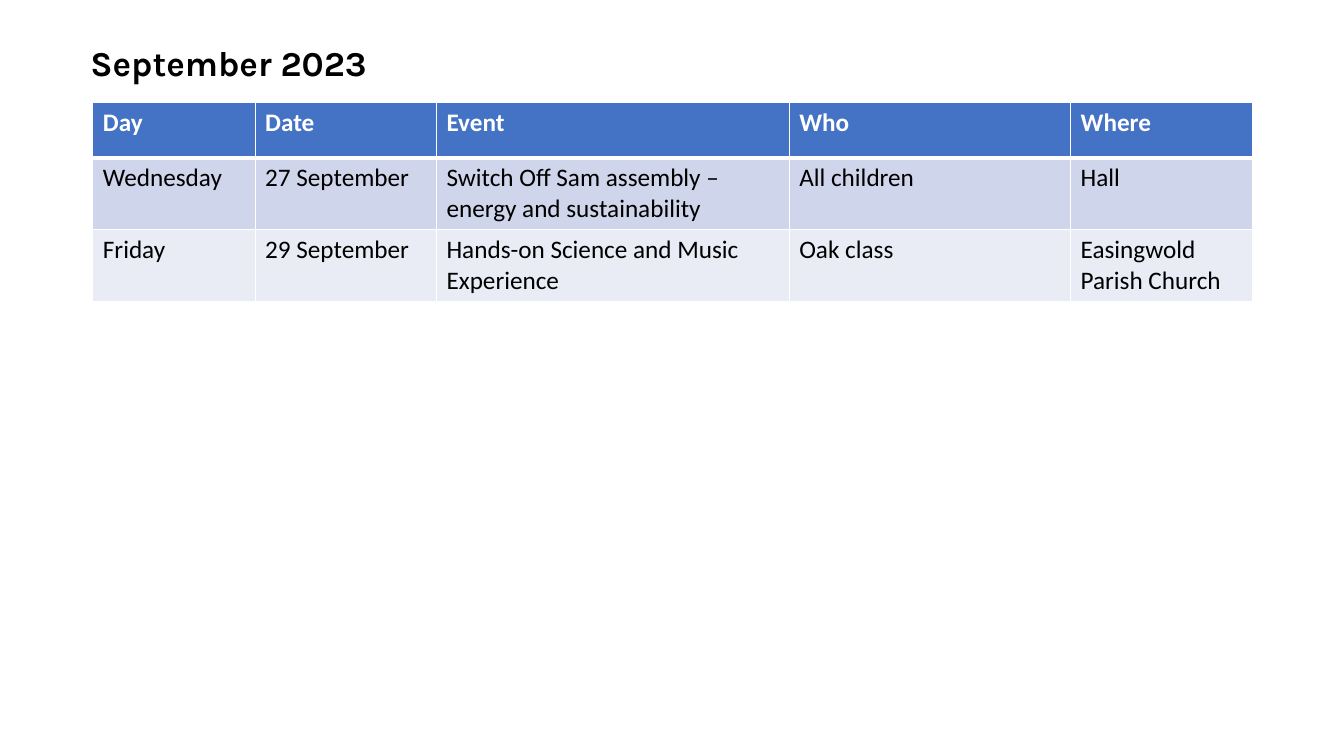
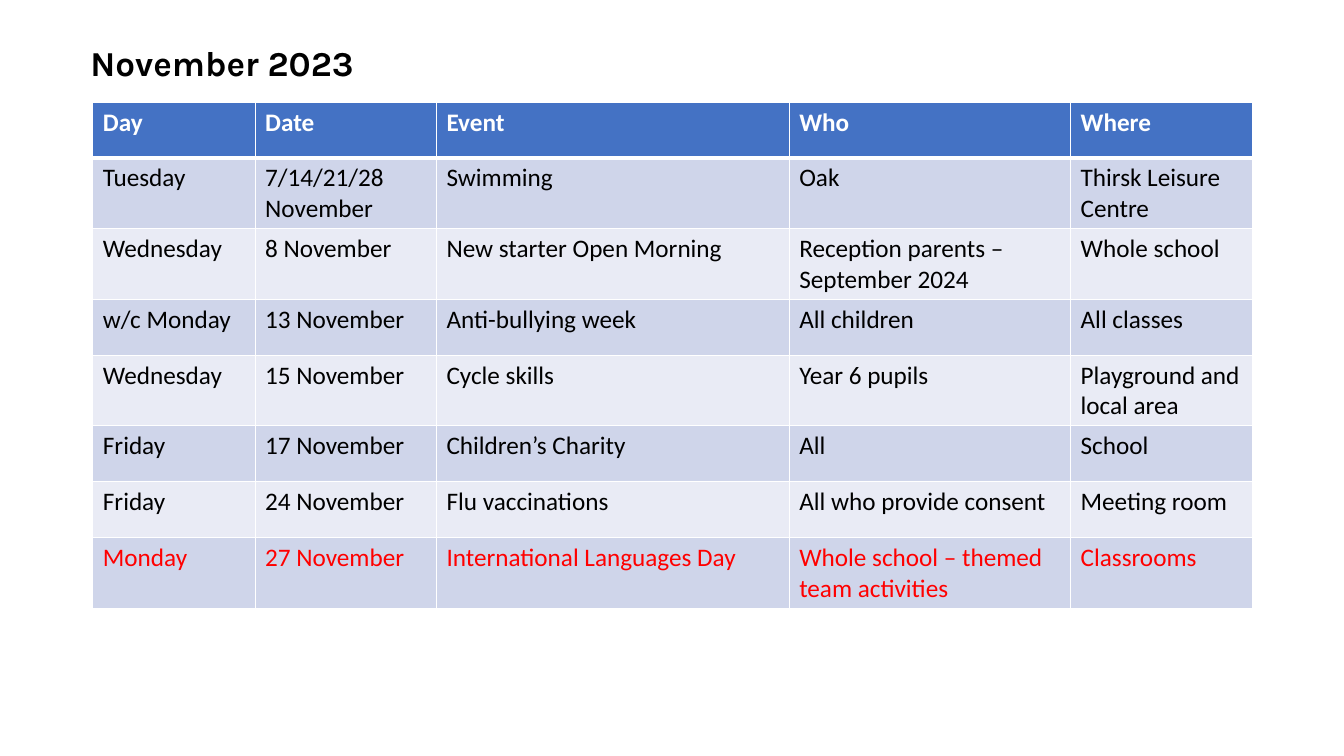
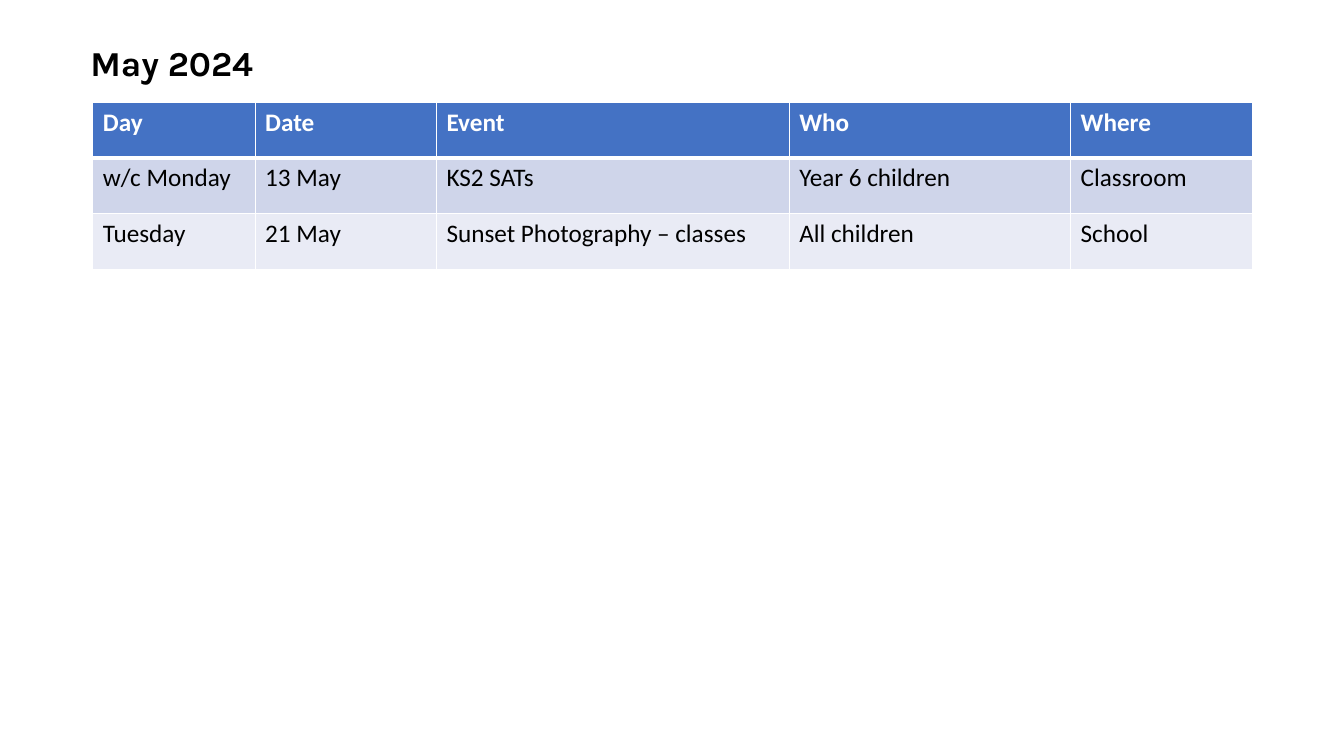
from lxml.etree import SubElement
from pptx import Presentation
from pptx.dml.color import RGBColor
from pptx.enum.text import MSO_AUTO_SIZE
from pptx.oxml.ns import qn
from pptx.util import Cm, Pt

# Shared style
WHITE, BLACK, RED = "FFFFFF", "000000", "FF0000"
HEADER_FILL = "4472C4"
BAND_FILLS = ["CFD5EA", "E9EBF5"]
TITLE_FONT, TABLE_FONT = "Karla", "Calibri"
COLUMN_WIDTHS = [4.09, 4.57, 8.89, 7.09, 4.6]
ROW_HEIGHT = 1.41
HEADERS = ("Day", "Date", "Event", "Who", "Where")

# Events by month
MONTHS = {
    "September 2023": [
        ("Wednesday", "27 September", "Switch Off Sam assembly – energy and sustainability",
         "All children", "Hall"),
        ("Friday", "29 September", "Hands-on Science and Music Experience",
         "Oak class", "Easingwold Parish Church"),
    ],
    "November 2023": [
        ("Tuesday", "7/14/21/28 November", "Swimming", "Oak", "Thirsk Leisure Centre"),
        ("Wednesday", "8 November", "New starter Open Morning",
         "Reception parents – September 2024", "Whole school"),
        ("w/c Monday", "13 November", "Anti-bullying week", "All children", "All classes"),
        ("Wednesday", "15 November", "Cycle skills", "Year 6 pupils",
         "Playground and local area"),
        ("Friday", "17 November", "Children’s Charity", "All", "School"),
        ("Friday", "24 November", "Flu vaccinations", "All who provide consent",
         "Meeting room"),
        ("Monday", "27 November", "International Languages Day",
         "Whole school – themed team activities", "Classrooms"),
    ],
    "May 2024": [
        ("w/c Monday", "13 May", "KS2 SATs", "Year 6 children", "Classroom"),
        ("Tuesday", "21 May", "Sunset Photography – classes", "All children", "School"),
    ],
}
HIGHLIGHTED_EVENTS = {"International Languages Day"}


def add_text(paragraph, text, font_name, size, color, bold):
    run = paragraph.add_run()
    run.text = text
    run.font.name = font_name
    run.font.size = Pt(size)
    run.font.bold = bold
    run.font.color.rgb = RGBColor.from_string(color)


def style_cell(cell, fill, top_width, bottom_width):
    properties = cell._tc.get_or_add_tcPr()
    borders = {"a:lnL": 1, "a:lnR": 1, "a:lnT": top_width, "a:lnB": bottom_width}
    for tag, width in borders.items():
        line = SubElement(properties, qn(tag), w=str(Pt(width)))
        line_fill = SubElement(line, qn("a:solidFill"))
        SubElement(line_fill, qn("a:srgbClr"), val=WHITE)
    cell.fill.solid()
    cell.fill.fore_color.rgb = RGBColor.from_string(fill)


presentation = Presentation()
presentation.slide_width = Cm(33.87)
presentation.slide_height = Cm(19.05)

for month, events in MONTHS.items():
    slide = presentation.slides.add_slide(presentation.slide_layouts[6])

    # Event table
    rows = [HEADERS] + events
    table = slide.shapes.add_table(
        len(rows), len(HEADERS), Cm(2.34), Cm(2.57),
        Cm(sum(COLUMN_WIDTHS)), Cm(ROW_HEIGHT * len(rows))).table
    for column, width in zip(table.columns, COLUMN_WIDTHS):
        column.width = Cm(width)

    for row_index, row in enumerate(rows):
        table.rows[row_index].height = Cm(ROW_HEIGHT)
        is_header = row_index == 0
        if is_header:
            fill, color = HEADER_FILL, WHITE
        else:
            fill = BAND_FILLS[(row_index - 1) % 2]
            color = RED if row[2] in HIGHLIGHTED_EVENTS else BLACK
        for column_index, text in enumerate(row):
            cell = table.cell(row_index, column_index)
            style_cell(cell, fill, 3 if row_index == 1 else 1, 3 if is_header else 1)
            add_text(cell.text_frame.paragraphs[0], text, TABLE_FONT, 18, color, is_header)

    # Month title
    title = slide.shapes.add_textbox(Cm(2.03), Cm(0.91), Cm(11.3), Cm(1.32))
    title.text_frame.word_wrap = True
    title.text_frame.auto_size = MSO_AUTO_SIZE.SHAPE_TO_FIT_TEXT
    add_text(title.text_frame.paragraphs[0], month, TITLE_FONT, 25, BLACK, True)

presentation.save("out.pptx")
